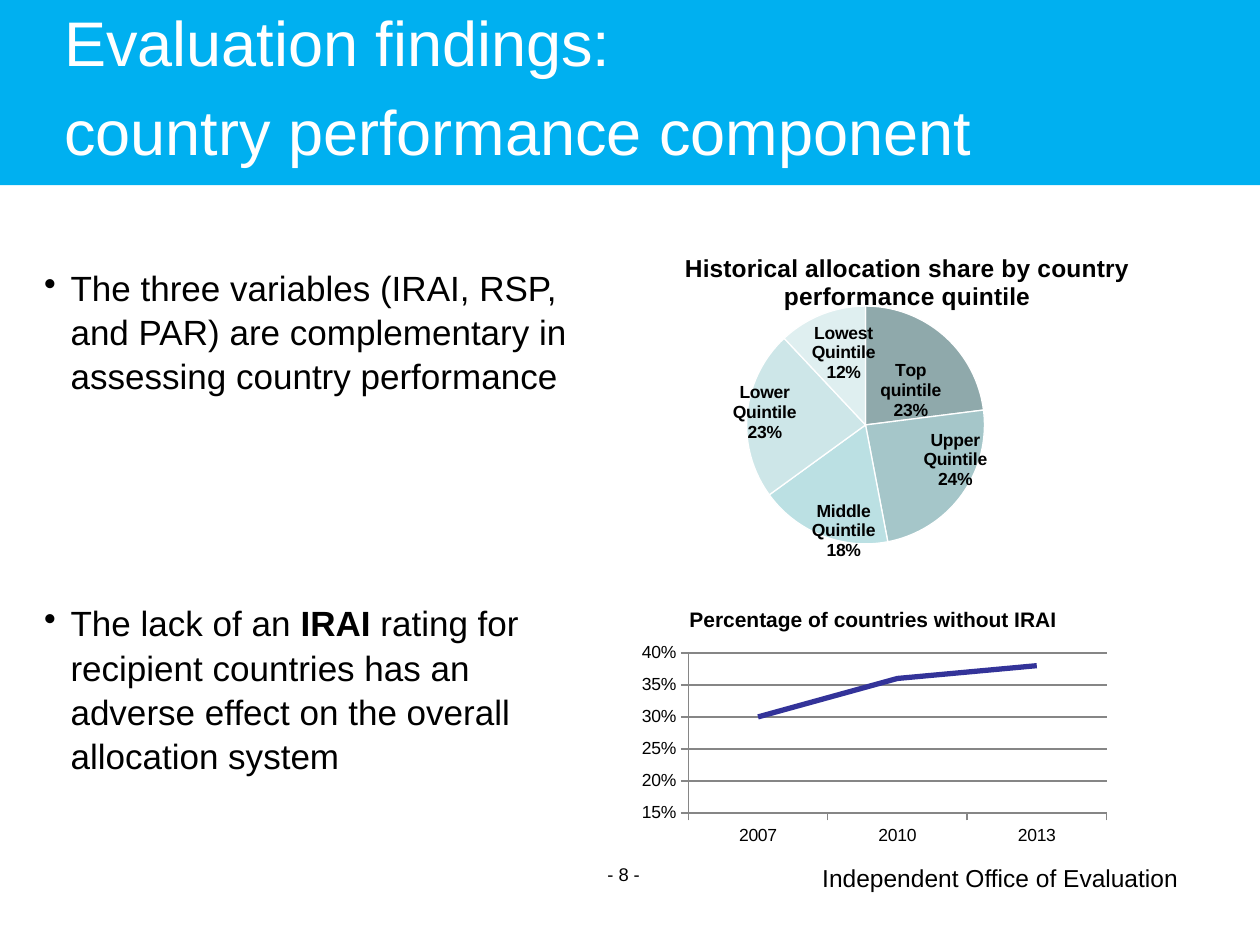
import pptx
import pptx.chart.data
import pptx.dml.color
import pptx.enum.chart
import pptx.enum.shapes
import pptx.enum.text
import pptx.oxml
import pptx.oxml.ns
import pptx.util
from lxml import etree

RGBColor = pptx.dml.color.RGBColor
Align = pptx.enum.text.PP_ALIGN
Anchor = pptx.enum.text.MSO_ANCHOR
ChartType = pptx.enum.chart.XL_CHART_TYPE
qn = pptx.oxml.ns.qn

SKY = RGBColor(0x00, 0xB0, 0xF0)
WHITE = RGBColor(0xFF, 0xFF, 0xFF)
BLACK = RGBColor(0x00, 0x00, 0x00)
GREY = RGBColor(0x86, 0x86, 0x86)
NAVY = RGBColor(0x33, 0x33, 0x99)
TEALS = [
    RGBColor(0x8F, 0xA9, 0xAB),
    RGBColor(0xA5, 0xC6, 0xC9),
    RGBColor(0xBB, 0xE0, 0xE3),
    RGBColor(0xCD, 0xE6, 0xE8),
    RGBColor(0xDF, 0xEF, 0xF0),
]
FONT = "Arial"
WIDTH, HEIGHT = 10, 7.5
INDENT = pptx.util.Inches(0.21)


def inches(box):
    return [pptx.util.Inches(length) for length in box]


def set_font(font, size, color=BLACK, bold=False):
    font.name = FONT
    font.size = pptx.util.Pt(size)
    font.color.rgb = color
    font.bold = bold


def add_text(page, box, paragraphs, size, color=BLACK, align=Align.LEFT,
             anchor=Anchor.TOP, gap=0, inset=0.0, wrap=True):
    frame = page.shapes.add_textbox(*inches(box)).text_frame
    frame.word_wrap = wrap
    frame.vertical_anchor = anchor
    frame.margin_left = frame.margin_right = pptx.util.Inches(inset)
    frame.margin_top = frame.margin_bottom = pptx.util.Inches(inset / 2)
    for index, spans in enumerate(paragraphs):
        para = frame.add_paragraph() if index else frame.paragraphs[0]
        para.alignment = align
        if index:
            para.space_before = pptx.util.Pt(gap)
        for text, bold in spans:
            span = para.add_run()
            span.text = text
            if bold:
                span.font.bold = True
        set_font(para.font, size, color)
    return frame


def add_header(page, box):
    left, top, width, height = box
    band = page.shapes.add_shape(pptx.enum.shapes.MSO_SHAPE.RECTANGLE, *inches(box))
    band.shadow.inherit = False
    band.fill.solid()
    band.fill.fore_color.rgb = SKY
    band.line.fill.background()
    title = [[("Evaluation findings:", False)], [("country performance component", False)]]
    add_text(page, (left + 0.51, top + 0.21, width * 0.89, 0.94), title, 36, WHITE,
             anchor=Anchor.MIDDLE, gap=8)


def add_findings(page, box):
    findings = [
        [("The three variables (IRAI, RSP, and PAR) are complementary "
          "in assessing country performance", False)],
        [("The lack of an ", False), ("IRAI ", True),
         ("rating for recipient countries has an adverse effect on the "
          "overall allocation system", False)],
    ]
    frame = add_text(page, box, findings, 20, gap=116)
    for para in frame.paragraphs:
        para.line_spacing = 1.05
        settings = para._p.get_or_add_pPr()
        settings.set("marL", str(INDENT))
        settings.set("indent", str(-INDENT))
        bullet = settings.makeelement(qn("a:buChar"), {"char": "•"})
        settings.find(qn("a:defRPr")).addprevious(bullet)


def manual_layout(inner=False, **places):
    layout = etree.Element(qn("c:layout"), nsmap=pptx.oxml.ns.namespaces("c"))
    manual = etree.SubElement(layout, qn("c:manualLayout"))
    if inner:
        etree.SubElement(manual, qn("c:layoutTarget"), val="inner")
        for mode in ("xMode", "yMode"):
            etree.SubElement(manual, qn("c:" + mode), val="edge")
    for name, share in places.items():
        etree.SubElement(manual, qn("c:" + name), val=str(share))
    return layout


def add_chart(page, box, kind, categories, values, title, title_size, plot):
    data = pptx.chart.data.CategoryChartData()
    data.categories = categories
    data.add_series("Series 1", values)
    chart = page.shapes.add_chart(kind, *inches(box), data).chart
    set_font(chart.font, 10)
    chart.has_legend = False
    chart.has_title = True
    para = chart.chart_title.text_frame.paragraphs[0]
    para.text = title
    set_font(para.font, title_size, bold=True)
    area = chart._chartSpace.chart.plotArea
    for old in area.findall(qn("c:layout")):
        area.remove(old)
    area.insert(0, manual_layout(inner=True, **dict(zip("xywh", plot))))
    return chart


def add_quintile_pie(page, box):
    categories = ["Top quintile", "Upper Quintile", "Middle Quintile",
                  "Lower Quintile", "Lowest Quintile"]
    shifts = [(0.01, 0.03), (0.07, 0), (0, 0.15), (-0.07, -0.02), (0, -0.05)]
    chart = add_chart(page, box, ChartType.PIE, categories, [23, 24, 18, 23, 12],
                      "Historical allocation share by country performance quintile",
                      14, (0.23, 0.21, 0.4, 0.71))
    chart.plots[0].vary_by_categories = True
    series = chart.plots[0].series[0]
    for index, color in enumerate(TEALS):
        point = series.points[index]
        point.format.fill.solid()
        point.format.fill.fore_color.rgb = color
        point.format.line.color.rgb = WHITE
        point.format.line.width = pptx.util.Pt(0.75)
        set_font(point.data_label.font, 10, bold=True)
        point.data_label.position = pptx.enum.chart.XL_LABEL_POSITION.CENTER
    for label, (across, down) in zip(series._element.iter(qn("c:dLbl")), shifts):
        label.find(qn("c:idx")).addnext(manual_layout(x=across, y=down))
        for flag, shown in (("showVal", "0"), ("showCatName", "1"), ("showPercent", "1")):
            label.find(qn("c:" + flag)).set("val", shown)
        separator = etree.SubElement(label, qn("c:separator"))
        separator.text = "\n"


def add_missing_rating_line(page, box):
    chart = add_chart(page, box, ChartType.LINE, ["2007", "2010", "2013"],
                      [0.3, 0.36, 0.38], "Percentage of countries without IRAI",
                      12, (0.12, 0.24, 0.86, 0.62))
    series = chart.plots[0].series[0]
    series.smooth = False
    series.format.line.color.rgb = NAVY
    series.format.line.width = pptx.util.Pt(3)
    scale = chart.value_axis
    scale.minimum_scale, scale.maximum_scale, scale.major_unit = 0.15, 0.4, 0.05
    scale.tick_labels.number_format = "0%"
    scale.tick_labels.number_format_is_linked = False
    scale.has_major_gridlines = True
    for line in (scale.major_gridlines.format.line, scale.format.line,
                 chart.category_axis.format.line):
        line.color.rgb = GREY
        line.width = pptx.util.Pt(0.75)
    for axis in (scale, chart.category_axis):
        axis.major_tick_mark = pptx.enum.chart.XL_TICK_MARK.OUTSIDE


def add_footer(page, box):
    left, top, width, height = box
    add_text(page, (left + width * 0.38, top, width * 0.23, height), [[("- 8 -", False)]],
             10.5, align=Align.CENTER, anchor=Anchor.MIDDLE, inset=0.1)
    add_text(page, (left + width * 0.64, top + 0.06, width * 0.305, 0.34),
             [[("Independent Office of Evaluation", False)]],
             14, align=Align.RIGHT, inset=0.1, wrap=False)


def main():
    deck = pptx.Presentation()
    deck.slide_width, deck.slide_height = inches((WIDTH, HEIGHT))
    page = deck.slides.add_slide(deck.slide_layouts[6])
    add_header(page, (0, 0, WIDTH, 1.47))
    add_findings(page, (0.35, 2.1, 4.41, 4.4))
    add_quintile_pie(page, (4.84, 1.86, 4.72, 2.68))
    add_missing_rating_line(page, (5, 4.69, 3.86, 2.05))
    add_footer(page, (0, 6.74, WIDTH, 0.4))
    deck.save("out.pptx")


if __name__ == "__main__":
    main()
